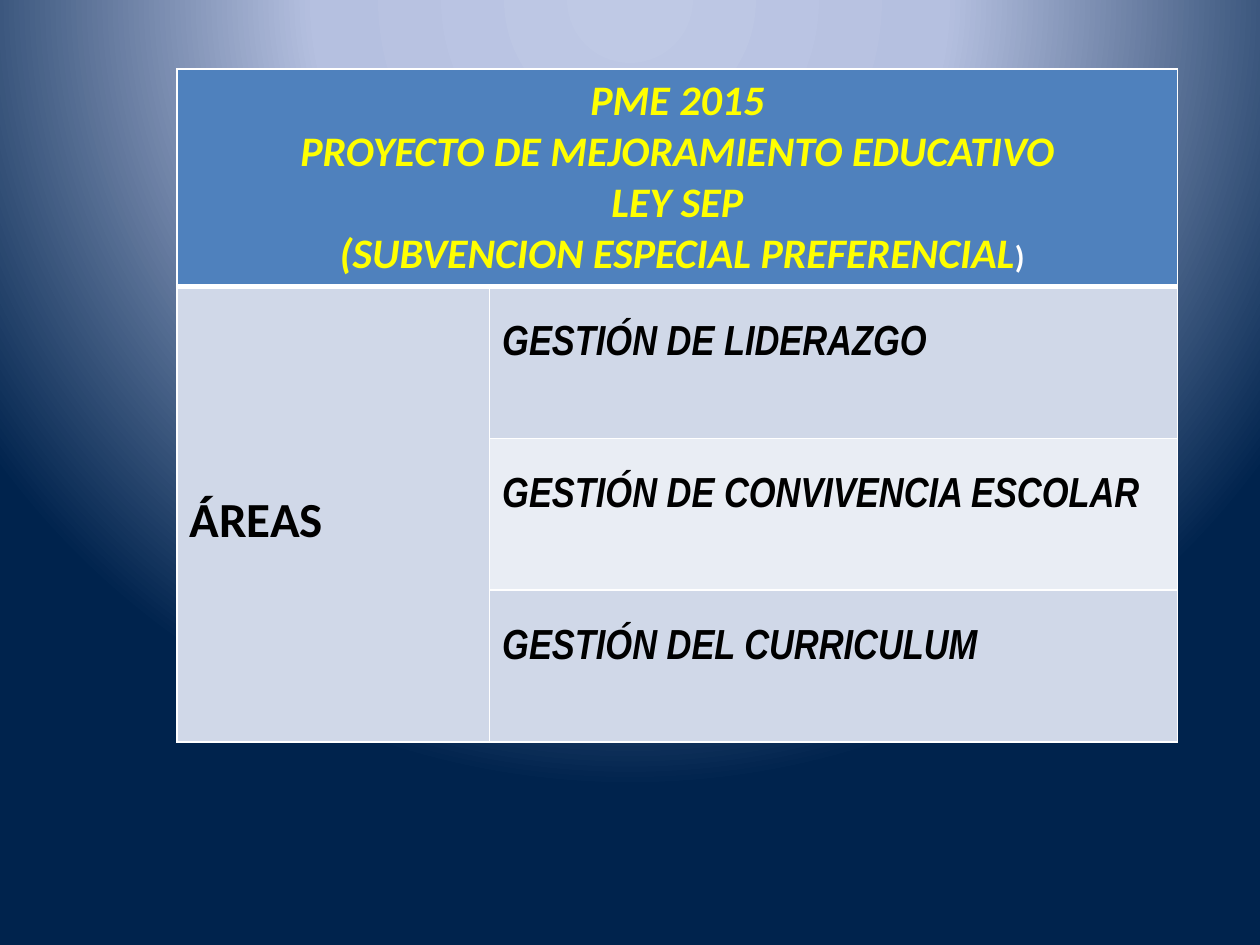
"""Build the PME 2015 slide: a table of the management areas."""
from lxml.etree import SubElement
from pptx import Presentation
from pptx.dml.color import RGBColor
from pptx.enum.text import MSO_ANCHOR as Anchor, PP_ALIGN as Align
from pptx.oxml import parse_xml
from pptx.oxml.ns import nsdecls, qn
from pptx.util import Cm, Pt

COLORS = {
    "glow": "BFC9E5", "haze": "B5C0E0", "navy": "00234D", "header": "4F81BD",
    "band": "D0D8E8", "light": "E9EDF4", "yellow": "FFFF00", "white": "FFFFFF",
    "black": "000000",
}
HEADING = [
    "PME 2015",
    "PROYECTO DE MEJORAMIENTO EDUCATIVO",
    "LEY SEP",
    " (SUBVENCION ESPECIAL PREFERENCIAL",
]
AREAS = [
    "GESTIÓN DE LIDERAZGO",
    "GESTIÓN DE CONVIVENCIA ESCOLAR",
    "GESTIÓN DEL CURRICULUM",
]


def write(paragraph, text, size=24, font="Calibri", color="black", italic=False,
          align=Align.LEFT):
    """Add a bold run to a paragraph."""
    paragraph.alignment = align
    run = paragraph.add_run()
    run.text = text
    run.font.size, run.font.name = Pt(size), font
    run.font.bold, run.font.italic = True, italic
    run.font.color.rgb = RGBColor.from_string(COLORS[color])


class Deck:
    """Hold the style and the current slide."""

    def __init__(self):
        """Open a presentation with one blank slide."""
        self.presentation = Presentation()
        self.presentation.slide_width = Cm(25.4)
        self.presentation.slide_height = Cm(19.05)
        self.slide = self.presentation.slides.add_slide(self.presentation.slide_layouts[6])

    def background(self, stops):
        """Fill the background with a radial glow from above the slide."""
        marks = "".join(
            f'<a:gs pos="{place * 1000}"><a:srgbClr val="{COLORS[color]}"/></a:gs>'
            for place, color in stops)
        self.slide.background.fill.solid()
        properties = self.slide.element.cSld.bg.bgPr
        solid = properties.find(qn("a:solidFill"))
        properties.replace(solid, parse_xml(
            f'<a:gradFill {nsdecls("a")} rotWithShape="1"><a:gsLst>{marks}</a:gsLst>'
            '<a:path path="circle"><a:fillToRect l="50000" t="-80000" r="50000" b="180000"/>'
            '</a:path></a:gradFill>'))

    def table(self, left, top, widths, heights):
        """Add a table with the given column widths and row heights."""
        grid = self.slide.shapes.add_table(
            len(heights), len(widths), Cm(left), Cm(top),
            Cm(sum(widths)), Cm(sum(heights))).table
        for column, width in zip(grid.columns, widths):
            column.width = Cm(width)
        for row, height in zip(grid.rows, heights):
            row.height = Cm(height)
        return grid

    def cell(self, cell, fill, top=1, bottom=1):
        """Give a cell its fill and white borders."""
        properties = cell._tc.get_or_add_tcPr()
        for side, width in zip("LRTB", (1, 1, top, bottom)):
            line = SubElement(properties, qn(f"a:ln{side}"), w=str(Pt(width)))
            paint = SubElement(line, qn("a:solidFill"))
            SubElement(paint, qn("a:srgbClr"), val=COLORS["white"])
        cell.fill.solid()
        cell.fill.fore_color.rgb = RGBColor.from_string(COLORS[fill])


def main():
    """Build and save the slide."""
    deck = Deck()
    deck.background([(0, "glow"), (40, "haze"), (100, "navy")])
    grid = deck.table(3.57, 1.39, [6.3, 13.87], [4.38] + [3.06] * 3)

    for column in range(2):
        deck.cell(grid.cell(0, column), "header", bottom=3)
    for row, area in enumerate(AREAS, 1):
        edge = 3 if row == 1 else 1
        deck.cell(grid.cell(row, 0), "band", top=edge)
        area_cell = grid.cell(row, 1)
        deck.cell(area_cell, "band" if row % 2 else "light", top=edge)
        area_cell.margin_top = Cm(0.77)
        write(area_cell.text_frame.paragraphs[0], area, font="Arial Narrow", italic=True)

    heading = grid.cell(0, 0)
    heading.merge(grid.cell(0, 1))
    for index, text in enumerate(HEADING):
        frame = heading.text_frame
        paragraph = frame.add_paragraph() if index else frame.paragraphs[0]
        write(paragraph, text, color="yellow", italic=True, align=Align.CENTER)
    write(paragraph, ")", size=18, color="white", align=Align.CENTER)

    label = grid.cell(1, 0)
    label.merge(grid.cell(3, 0))
    label.vertical_anchor = Anchor.MIDDLE
    label.margin_top = Cm(0.38)
    write(label.text_frame.paragraphs[0], "ÁREAS", size=28)
    deck.presentation.save("out.pptx")


if __name__ == "__main__":
    main()
